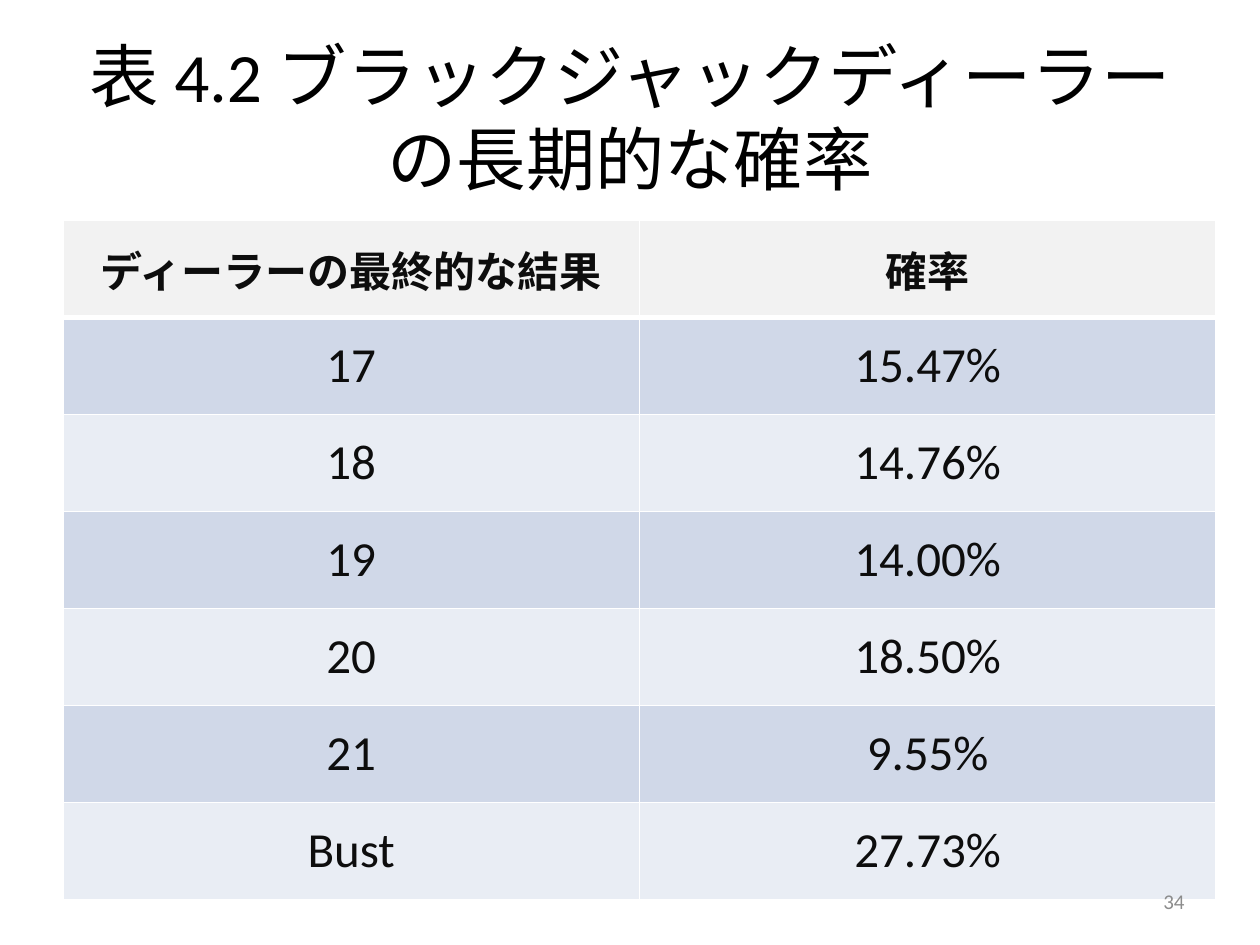
from lxml import etree
from pptx import Presentation
from pptx.dml.color import RGBColor
from pptx.enum.text import MSO_ANCHOR, PP_ALIGN
from pptx.oxml.ns import qn
from pptx.util import Inches, Pt

CENTER, RIGHT = PP_ALIGN.CENTER, PP_ALIGN.RIGHT
MIDDLE = MSO_ANCHOR.MIDDLE

BLACK = RGBColor(0x00, 0x00, 0x00)
INK = RGBColor(0x0D, 0x0D, 0x0D)
GRAY = RGBColor(0x8C, 0x8C, 0x8C)
WHITE = RGBColor(0xFF, 0xFF, 0xFF)
HEADER_FILL = RGBColor(0xF2, 0xF2, 0xF2)
BAND_FILLS = (RGBColor(0xD0, 0xD8, 0xE8), RGBColor(0xE9, 0xED, 0xF4))

PROBABILITIES = [
    ("ディーラーの最終的な結果", "確率"),
    ("17", "15.47%"),
    ("18", "14.76%"),
    ("19", "14.00%"),
    ("20", "18.50%"),
    ("21", "9.55%"),
    ("Bust", "27.73%"),
]


class SlideBuilder:
    font_name = "Calibri"

    def __init__(self, slide):
        self.slide = slide

    def style(self, paragraph, size, color, align=CENTER, bold=False):
        paragraph.alignment = align
        font = paragraph.font
        font.name, font.size, font.bold = self.font_name, Pt(size), bold
        font.color.rgb = color

    def text(self, words, left, top, width, height, size, color, align=CENTER):
        box = self.slide.shapes.add_textbox(
            Inches(left), Inches(top), Inches(width), Inches(height))
        frame = box.text_frame
        frame.word_wrap = True
        frame.vertical_anchor = MIDDLE
        frame.text = words
        self.style(frame.paragraphs[0], size, color, align)

    def borders(self, cell, widths):
        """Draw the left, right, top and bottom edges, ahead of the cell's fill."""
        properties = cell._tc.get_or_add_tcPr()
        for index, (side, width) in enumerate(zip("LRTB", widths)):
            line = etree.Element(qn(f"a:ln{side}"), w=str(Pt(width)))
            fill = etree.SubElement(line, qn("a:solidFill"))
            etree.SubElement(fill, qn("a:srgbClr"), val=str(WHITE))
            properties.insert(index, line)

    def table(self, rows, left, top, width, height):
        table = self.slide.shapes.add_table(
            len(rows), len(rows[0]),
            Inches(left), Inches(top), Inches(width), Inches(height)).table
        for r, row in enumerate(rows):
            header = r == 0
            for c, words in enumerate(row):
                cell = table.cell(r, c)
                cell.text = words
                cell.vertical_anchor = MIDDLE
                cell.fill.solid()
                cell.fill.fore_color.rgb = (
                    HEADER_FILL if header else BAND_FILLS[(r - 1) % 2])
                self.style(cell.text_frame.paragraphs[0],
                           24 if header else 28, INK, bold=header)
                # The rule under the header is thicker than the others
                self.borders(cell, (1, 1, 3 if r == 1 else 1, 3 if header else 1))


def main():
    deck = Presentation()
    deck.slide_width, deck.slide_height = Inches(10), Inches(7.5)
    builder = SlideBuilder(deck.slides.add_slide(deck.slide_layouts[6]))

    # Title
    builder.text("表 4.2 ブラックジャックディーラーの長期的な確率",
                 0.5, 0.3, 9, 1.25, 39.6, BLACK)
    # Probability of each final result
    builder.table(PROBABILITIES, 0.5, 1.75, 9.15, 5.39)
    # Slide number
    builder.text("34", 7.17, 6.95, 2.33, 0.4, 12, GRAY, RIGHT)

    deck.save("out.pptx")


if __name__ == "__main__":
    main()
